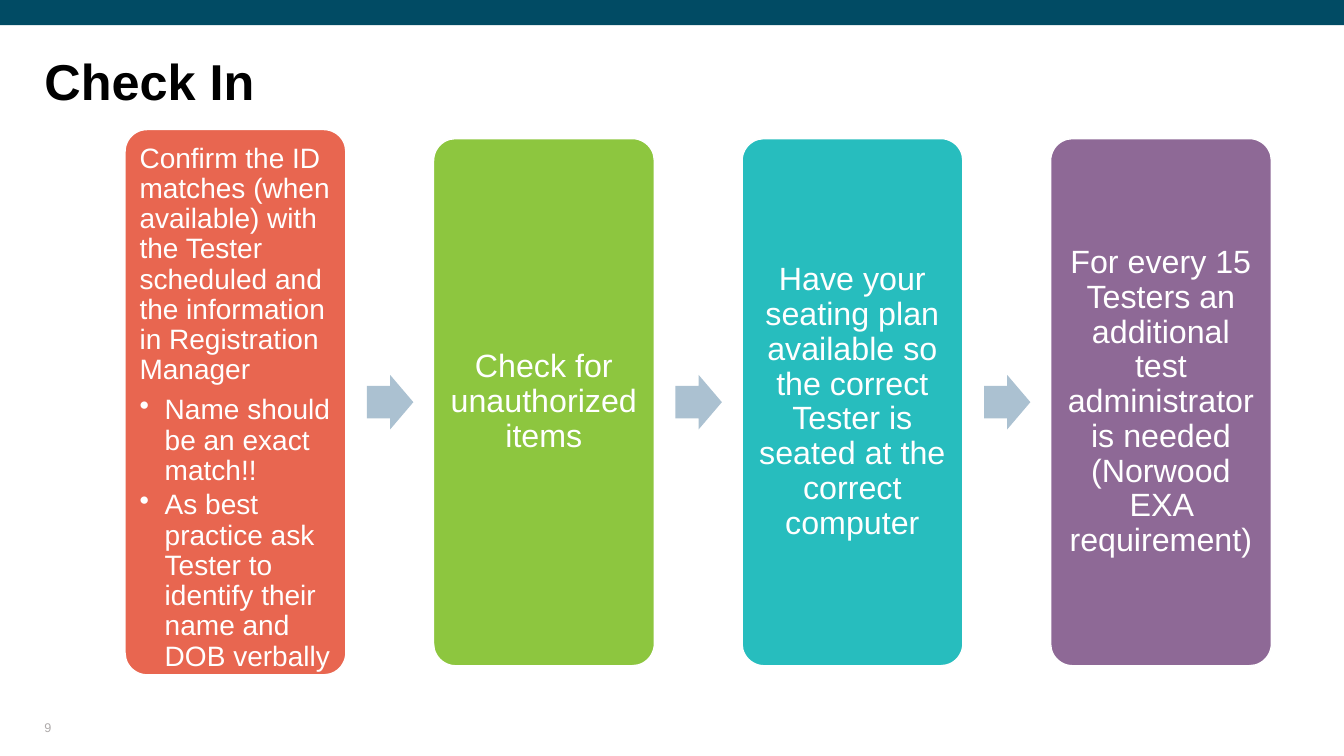
from dataclasses import dataclass

from lxml import etree
from pptx import Presentation
from pptx import util as u
from pptx.dml.color import RGBColor
from pptx.enum import shapes, text
from pptx.oxml.ns import qn


@dataclass(frozen=True)
class Theme:
    font: str = "Arial"
    band: str = "014B64"
    title: str = "000000"
    on_card: str = "FFFFFF"
    arrow: str = "ABC1D1"
    page: str = "AFABAB"
    cards: tuple = ("E86650", "8DC63F", "27BDBE", "8E6996")
    title_size: int = 36
    card_size: int = 23
    detail_size: int = 20
    page_size: int = 9


class SlideBuilder:
    def __init__(self, slide, theme):
        self.slide = slide
        self.theme = theme

    def block(self, kind, box, fill, adjustments=(), outline=None):
        block = self.slide.shapes.add_shape(kind, *map(u.Inches, box))
        block.shadow.inherit = False
        block.fill.solid()
        block.fill.fore_color.rgb = RGBColor.from_string(fill)
        if outline:
            block.line.color.rgb = RGBColor.from_string(outline)
            block.line.width = u.Pt(1)
        else:
            block.line.fill.background()
        for index, value in enumerate(adjustments):
            block.adjustments[index] = value
        return block

    def frame(self, holder, inset, anchor):
        frame = holder.text_frame
        frame.word_wrap = True
        frame.vertical_anchor = anchor
        frame.margin_left = frame.margin_right = u.Inches(inset)
        frame.margin_top = frame.margin_bottom = u.Inches(inset)
        return frame

    def add_words(self, paragraph, words, size, color, bold=False,
                  align=text.PP_ALIGN.LEFT, spacing=0.9, after=0):
        paragraph.alignment = align
        paragraph.line_spacing = spacing
        paragraph.space_after = u.Pt(after)
        run = paragraph.add_run()
        run.text = words
        run.font.name = self.theme.font
        run.font.size = u.Pt(size)
        run.font.bold = bold
        run.font.color.rgb = RGBColor.from_string(color)

    def label(self, box, words, size, color, anchor, **style):
        holder = self.slide.shapes.add_textbox(*map(u.Inches, box))
        frame = self.frame(holder, 0, anchor)
        self.add_words(frame.paragraphs[0], words, size, color, **style)

    def card(self, box, fill, words, points=()):
        theme = self.theme
        card = self.block(shapes.MSO_SHAPE.ROUNDED_RECTANGLE, box, fill,
                          (0.1,), theme.on_card)
        if not points:
            frame = self.frame(card, 0.1, text.MSO_ANCHOR.MIDDLE)
            self.add_words(frame.paragraphs[0], words, theme.card_size,
                           theme.on_card, align=text.PP_ALIGN.CENTER, after=8)
            return
        frame = self.frame(card, 0.08, text.MSO_ANCHOR.TOP)
        self.add_words(frame.paragraphs[0], words, theme.detail_size,
                       theme.on_card, after=7)
        for point in points:
            paragraph = frame.add_paragraph()
            self.bullet(paragraph)
            self.add_words(paragraph, point, theme.detail_size,
                           theme.on_card, after=3)

    def bullet(self, paragraph):
        paragraph.level = 1
        properties = paragraph._p.get_or_add_pPr()
        properties.set("marL", str(u.Inches(0.25)))
        properties.set("indent", str(-u.Inches(0.25)))
        etree.SubElement(properties, qn("a:buChar")).set("char", "•")

    def arrow(self, box):
        self.block(shapes.MSO_SHAPE.RIGHT_ARROW, box, self.theme.arrow,
                   (0.6, 0.5))


STEPS = (
    ("Confirm the ID matches (when available) with the Tester scheduled "
     "and the information in Registration Manager",
     ("Name should be an exact match!!",
      "As best practice ask Tester to identify their name and DOB verbally")),
    ("Check for unauthorized items", ()),
    ("Have your seating plan available so the correct Tester is seated "
     "at the correct computer", ()),
    ("For every 15 Testers an additional test administrator is needed "
     "(Norwood EXA requirement)", ()),
)


def main():
    deck = Presentation()
    deck.slide_width, deck.slide_height = u.Inches(13.33), u.Inches(7.5)
    theme = Theme()
    builder = SlideBuilder(deck.slides.add_slide(deck.slide_layouts[6]), theme)

    # Top band and title
    builder.block(shapes.MSO_SHAPE.RECTANGLE, (0, 0, 13.33, 0.25), theme.band)
    builder.label((0.44, 0.57, 12.41, 1.27), "Check In", theme.title_size,
                  theme.title, text.MSO_ANCHOR.TOP, bold=True)

    # Check-in steps, centred on one line and joined by arrows
    first_left, pitch, card_width, middle = 1.24, 3.06, 2.19, 3.99
    for index, ((words, points), fill) in enumerate(zip(STEPS, theme.cards)):
        left = first_left + index * pitch
        height = 5.41 if points else 5.23
        builder.card((left, middle - height / 2, card_width, height),
                     fill, words, points)
        if index < len(STEPS) - 1:
            builder.arrow((left + 2.4, middle - 0.27, 0.46, 0.54))

    # Page number
    builder.label((0.44, 7.05, 3, 0.24), "9", theme.page_size, theme.page,
                  text.MSO_ANCHOR.BOTTOM, spacing=1.0)

    deck.save("out.pptx")


if __name__ == "__main__":
    main()
